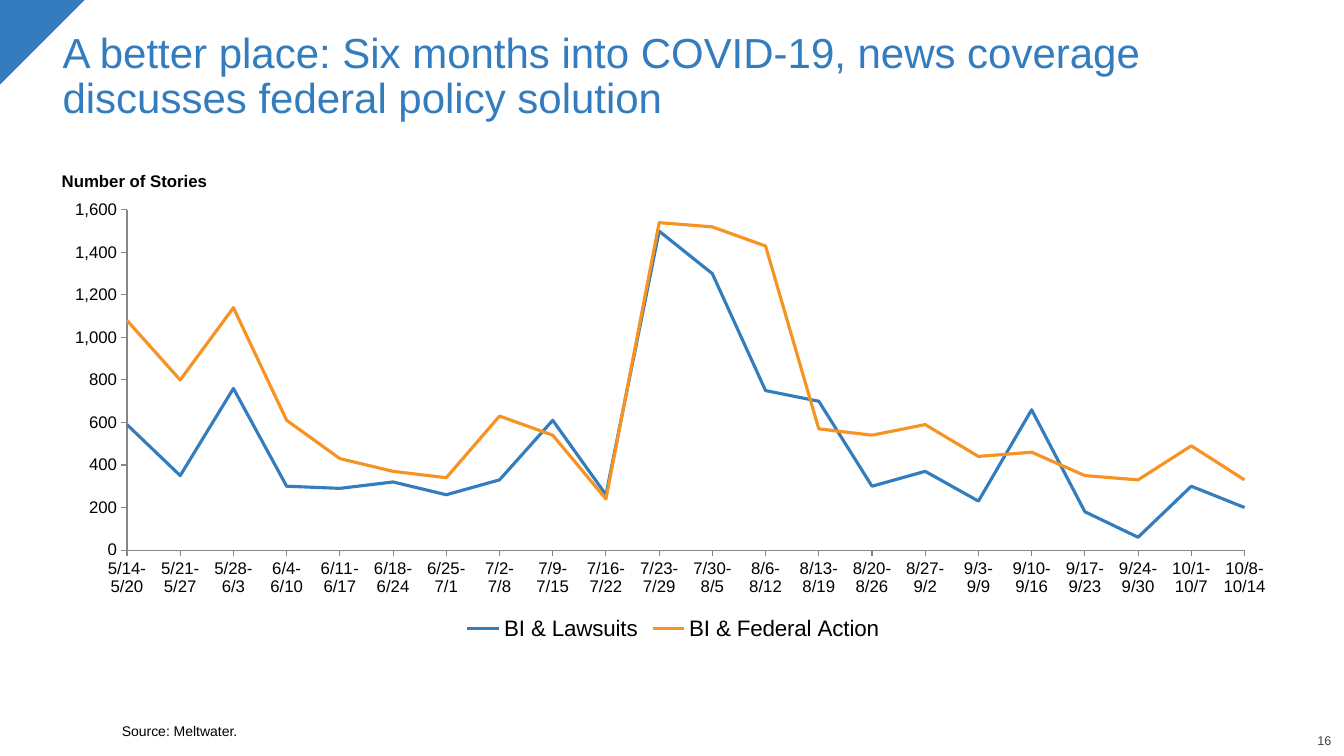
"""Build a slide with a line chart of weekly news coverage."""
import lxml.etree
import pptx
import pptx.chart.data
import pptx.dml.color
import pptx.enum.chart
import pptx.enum.shapes
import pptx.enum.text
import pptx.oxml.ns
import pptx.util

Pt = pptx.util.Pt
ALIGN = pptx.enum.text.PP_ALIGN
ANCHOR = pptx.enum.text.MSO_ANCHOR

FONT_NAME = "Arial"
BLUE = pptx.dml.color.RGBColor(0x33, 0x7D, 0xBE)
ORANGE = pptx.dml.color.RGBColor(0xF6, 0x93, 0x22)
BLACK = pptx.dml.color.RGBColor(0, 0, 0)
DARK_GRAY = pptx.dml.color.RGBColor(0x40, 0x40, 0x40)
AXIS_GRAY = pptx.dml.color.RGBColor(0x86, 0x86, 0x86)

WEEKS = [
    "5/14-5/20", "5/21-5/27", "5/28-6/3", "6/4-6/10", "6/11-6/17", "6/18-6/24",
    "6/25-7/1", "7/2-7/8", "7/9-7/15", "7/16-7/22", "7/23-7/29", "7/30-8/5",
    "8/6-8/12", "8/13-8/19", "8/20-8/26", "8/27-9/2", "9/3-9/9", "9/10-9/16",
    "9/17-9/23", "9/24-9/30", "10/1-10/7", "10/8-10/14",
]
STORIES = [
    ("BI & Lawsuits", BLUE,
     [590, 350, 760, 300, 290, 320, 260, 330, 610, 260, 1500,
      1300, 750, 700, 300, 370, 230, 660, 180, 60, 300, 200]),
    ("BI & Federal Action", ORANGE,
     [1080, 800, 1140, 610, 430, 370, 340, 630, 540, 240, 1540,
      1520, 1430, 570, 540, 590, 440, 460, 350, 330, 490, 330]),
]
PLOT_AREA = {"x": 0.06, "y": 0.04, "w": 0.9, "h": 0.75}


def format_font(font, size, color, bold=False):
    """Set the face, size, colour and weight of a font."""
    font.name = FONT_NAME
    font.size = Pt(size)
    font.bold = bold
    font.color.rgb = color


def write_text(shape, text, size, color=BLACK, bold=False, align=ALIGN.LEFT,
               anchor=ANCHOR.TOP, margins=(7.2, 3.6)):
    """Put one formatted paragraph in a shape."""
    frame = shape.text_frame
    frame.word_wrap = True
    frame.auto_size = pptx.enum.text.MSO_AUTO_SIZE.NONE
    frame.vertical_anchor = anchor
    frame.margin_left = frame.margin_right = Pt(margins[0])
    frame.margin_top = frame.margin_bottom = Pt(margins[1])
    paragraph = frame.paragraphs[0]
    paragraph.alignment = align
    paragraph.line_spacing = 0.9
    run = paragraph.add_run()
    run.text = text
    format_font(run.font, size, color, bold)


def add_text(slide, box, text, size, **text_format):
    """Add a text box at left, top, width and height in points."""
    shape = slide.shapes.add_textbox(*map(Pt, box))
    write_text(shape, text, size, **text_format)


def add_title(slide, box, text):
    """Move and fill the title placeholder."""
    title = slide.shapes.title
    title.left, title.top, title.width, title.height = map(Pt, box)
    write_text(title, text, 30, color=BLUE, anchor=ANCHOR.MIDDLE)


def add_corner(slide, side):
    """Add the triangle in the top left corner."""
    corner = slide.shapes.add_shape(
        pptx.enum.shapes.MSO_SHAPE.RIGHT_TRIANGLE, 0, 0, Pt(side), Pt(side))
    corner.rotation = 90
    corner.shadow.inherit = False
    corner.fill.solid()
    corner.fill.fore_color.rgb = BLUE
    corner.line.fill.background()


def format_axis(axis):
    """Give an axis outside ticks, a thin line and small labels."""
    axis.has_major_gridlines = False
    axis.major_tick_mark = pptx.enum.chart.XL_TICK_MARK.OUTSIDE
    axis.minor_tick_mark = pptx.enum.chart.XL_TICK_MARK.NONE
    axis.format.line.color.rgb = AXIS_GRAY
    axis.format.line.width = Pt(0.75)
    format_font(axis.tick_labels.font, 12, BLACK)


def place_plot_area(chart):
    """Fix the inner plot area and start the lines on the value axis."""
    qn = pptx.oxml.ns.qn
    plot_area = next(chart.element.iter(qn("c:plotArea")))
    for old_layout in plot_area.findall(qn("c:layout")):
        plot_area.remove(old_layout)
    layout = lxml.etree.Element(qn("c:layout"))
    manual = lxml.etree.SubElement(layout, qn("c:manualLayout"))
    settings = {"layoutTarget": "inner", "xMode": "edge", "yMode": "edge", **PLOT_AREA}
    for name, value in settings.items():
        lxml.etree.SubElement(manual, qn("c:" + name)).set("val", str(value))
    plot_area.insert(0, layout)
    value_axis = plot_area.find(qn("c:valAx"))
    for old_crossing in value_axis.findall(qn("c:crossBetween")):
        value_axis.remove(old_crossing)
    crossing = lxml.etree.Element(qn("c:crossBetween"))
    crossing.set("val", "midCat")
    value_axis.find(qn("c:majorUnit")).addprevious(crossing)
    for body in plot_area.find(qn("c:catAx")).iter(qn("a:bodyPr")):
        body.set("rot", "0")


def add_line_chart(slide, box):
    """Add the chart of stories per week."""
    data = pptx.chart.data.CategoryChartData(number_format="General")
    data.categories = WEEKS
    for name, _, values in STORIES:
        data.add_series(name, values)
    chart = slide.shapes.add_chart(
        pptx.enum.chart.XL_CHART_TYPE.LINE, *map(Pt, box), data).chart
    chart.has_title = False
    format_font(chart.font, 16, BLACK)
    chart.has_legend = True
    chart.legend.position = pptx.enum.chart.XL_LEGEND_POSITION.BOTTOM
    chart.legend.include_in_layout = False
    format_font(chart.legend.font, 16, BLACK)
    chart.plots[0].vary_by_categories = False
    for series, (_, color, _) in zip(chart.plots[0].series, STORIES):
        series.smooth = False
        series.marker.style = pptx.enum.chart.XL_MARKER_STYLE.NONE
        series.format.line.color.rgb = color
        series.format.line.width = Pt(2.25)
    format_axis(chart.category_axis)
    format_axis(chart.value_axis)
    chart.value_axis.minimum_scale = 0
    chart.value_axis.maximum_scale = 1600
    chart.value_axis.major_unit = 200
    chart.value_axis.tick_labels.number_format = "#,##0"
    chart.value_axis.tick_labels.number_format_is_linked = False
    place_plot_area(chart)


def main():
    """Build and save the presentation."""
    presentation = pptx.Presentation()
    presentation.slide_width = Pt(960)
    presentation.slide_height = Pt(540)
    slide = presentation.slides.add_slide(presentation.slide_layouts[5])
    add_corner(slide, 60.5)
    add_title(slide, (37.5, 18, 888, 75),
              "A better place: Six months into COVID-19, news coverage "
              "discusses federal policy solution")
    add_text(slide, (37, 120, 888, 19), "Number of Stories", 12, bold=True)
    add_line_chart(slide, (37.5, 137, 887, 324))
    add_text(slide, (87, 495.5, 838, 32.5), "Source: Meltwater.", 10,
             anchor=ANCHOR.BOTTOM, margins=(0, 0))
    add_text(slide, (905, 525, 46, 9.5), "16", 9, color=DARK_GRAY,
             align=ALIGN.RIGHT, anchor=ANCHOR.BOTTOM, margins=(0, 0))
    presentation.save("out.pptx")


if __name__ == "__main__":
    main()
